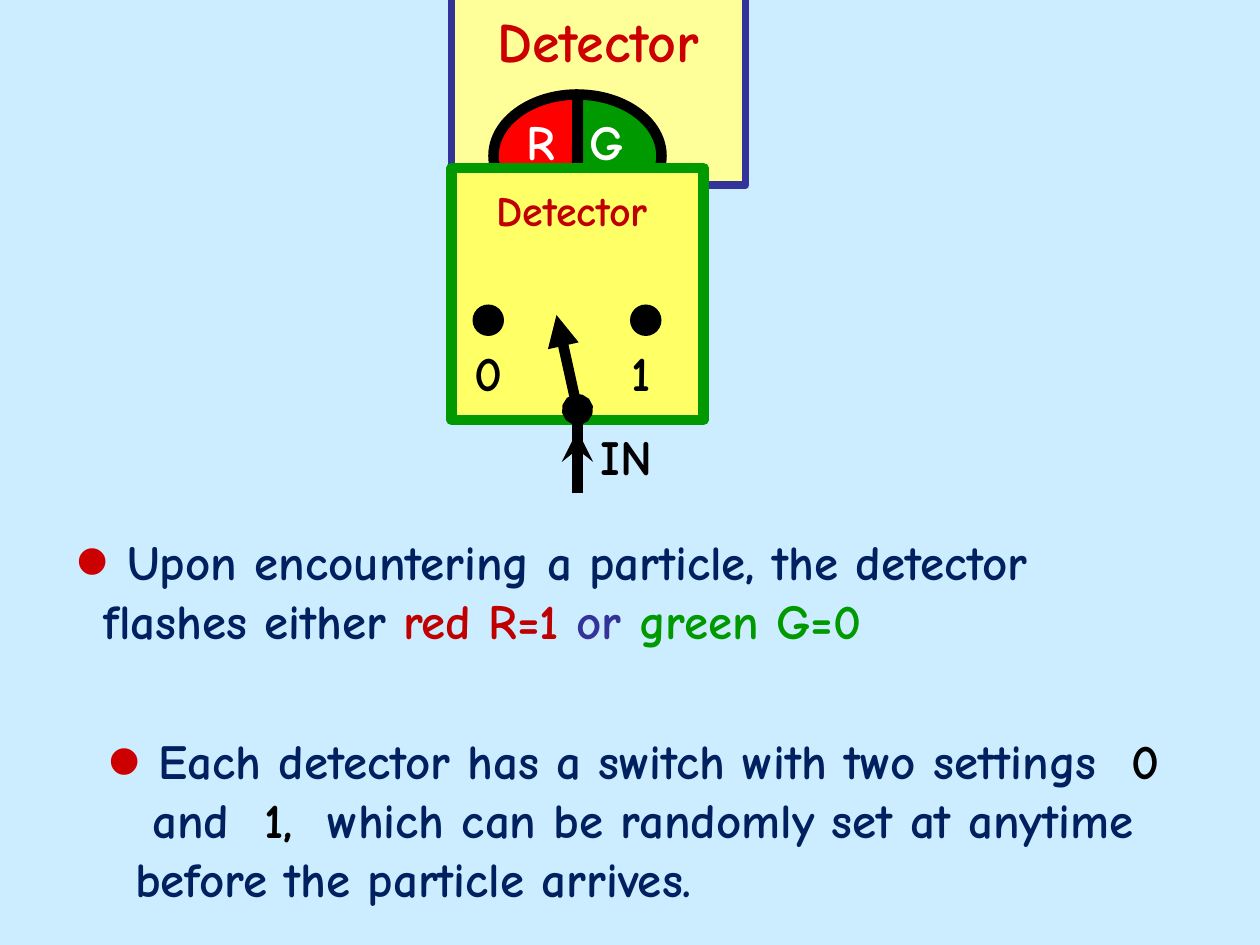
from lxml import etree
from pptx import Presentation
from pptx.dml.color import RGBColor
from pptx.enum.shapes import MSO_CONNECTOR, MSO_SHAPE
from pptx.enum.text import MSO_ANCHOR, MSO_AUTO_SIZE, PP_ALIGN
from pptx.oxml.ns import qn
from pptx.util import Pt

STRAIGHT = MSO_CONNECTOR.STRAIGHT
CHORD, RECTANGLE, OVAL = MSO_SHAPE.CHORD, MSO_SHAPE.RECTANGLE, MSO_SHAPE.OVAL
TOP, MIDDLE = MSO_ANCHOR.TOP, MSO_ANCHOR.MIDDLE
GROW = MSO_AUTO_SIZE.SHAPE_TO_FIT_TEXT
LEFT, CENTER = PP_ALIGN.LEFT, PP_ALIGN.CENTER

SKY = RGBColor(0xCC, 0xEC, 0xFF)
RED = RGBColor(0xFF, 0x00, 0x00)
GREEN = RGBColor(0x00, 0x99, 0x00)
YELLOW = RGBColor(0xFF, 0xFF, 0x66)
CREAM = RGBColor(0xFF, 0xFF, 0x99)
INDIGO = RGBColor(0x33, 0x33, 0x99)
NAVY = RGBColor(0x00, 0x20, 0x60)
CRIMSON = RGBColor(0xCC, 0x00, 0x00)
DARK_RED = RGBColor(0xC0, 0x00, 0x00)
BLACK = RGBColor(0x00, 0x00, 0x00)
WHITE = RGBColor(0xFF, 0xFF, 0xFF)

BOTTOM_SIDE = 2
CENTRE_X = 330


def write(frame, *runs, size=28, align=LEFT, anchor=TOP, bullet=None, hanging=16):
    """Fill a text frame with one paragraph of (text, colour) runs."""
    frame.word_wrap = True
    frame.auto_size = GROW
    frame.vertical_anchor = anchor
    paragraph = frame.paragraphs[0]
    paragraph.alignment = align
    paragraph.space_before = Pt(0)
    if bullet is not None:
        properties = paragraph._p.get_or_add_pPr()
        properties.set("marL", str(Pt(hanging)))
        properties.set("indent", str(Pt(-hanging)))
        colour = etree.SubElement(properties, qn("a:buClr"))
        etree.SubElement(colour, qn("a:srgbClr"), val=str(bullet))
        etree.SubElement(properties, qn("a:buSzPct"), val="200000")
        etree.SubElement(properties, qn("a:buFont"), typeface="Arial")
        etree.SubElement(properties, qn("a:buChar"), char="•")
    for text, color in runs:
        run = paragraph.add_run()
        run.text = text
        run.font.name = "Comic Neue"
        run.font.size = Pt(size)
        run.font.bold = True
        run.font.color.rgb = color


class DetectorSlide:
    """Hold the slide, its drawing group and the shared line style."""

    def __init__(self, slide, stroke=6):
        self.slide = slide
        self.stroke = stroke
        self.drawing = slide.shapes.add_group_shape().shapes
        slide.background.fill.solid()
        slide.background.fill.fore_color.rgb = SKY

    def place(self, holder, left, top, width, height):
        holder.left, holder.top = Pt(left), Pt(top)
        holder.width, holder.height = Pt(width), Pt(height)

    def title(self, text, *box):
        title = self.slide.shapes.title
        self.place(title, *box)
        title.fill.solid()
        title.fill.fore_color.rgb = CREAM
        title.line.color.rgb = INDIGO
        title.line.width = Pt(4.5)
        write(title.text_frame, (text, CRIMSON), size=32, align=CENTER, anchor=MIDDLE)

    def bullet(self, index, box, *runs):
        body = self.slide.placeholders[index]
        self.place(body, *box)
        write(body.text_frame, *runs, bullet=CRIMSON)

    def shape(self, kind, left, top, width, height, fill, line=None):
        shape = self.drawing.add_shape(kind, Pt(left), Pt(top), Pt(width), Pt(height))
        shape.shadow.inherit = False
        shape.fill.solid()
        shape.fill.fore_color.rgb = fill
        if line is None:
            shape.line.fill.background()
        else:
            shape.line.color.rgb = line
            shape.line.width = Pt(self.stroke)
        return shape

    def lamp(self, fill, rotation):
        lamp = self.shape(CHORD, 282, 54, 96, 70, fill, BLACK)
        lamp.adjustments[0] = 54.28
        lamp.adjustments[1] = 162
        lamp.rotation = rotation

    def label(self, text, left, top, width, height, color=BLACK, **style):
        label = self.drawing.add_textbox(Pt(left), Pt(top), Pt(width), Pt(height))
        write(label.text_frame, (text, color), **style)

    def line(self, start, end, head=None, tail=None):
        line = self.drawing.add_connector(STRAIGHT, *map(Pt, (*start, *end)))
        line.line.color.rgb = BLACK
        line.line.width = Pt(self.stroke)
        etree.SubElement(line._element.spPr, qn("a:effectLst"))
        outline = line.line._get_or_add_ln()
        for tag, kind in (("a:headEnd", head), ("a:tailEnd", tail)):
            if kind:
                etree.SubElement(outline, qn(tag), type=kind)
        return line


def main():
    deck = Presentation()
    deck.slide_width, deck.slide_height = Pt(720), Pt(540)
    page = DetectorSlide(deck.slides.add_slide(deck.slide_layouts[3]))

    page.title("Detector", 258, 0, 168, 46)
    page.lamp(RED, 0)
    page.lamp(GREEN, 180)
    casing = page.shape(RECTANGLE, 258, 96, 144, 144, YELLOW, GREEN)
    page.line((CENTRE_X, 234), (318, 180), head="oval", tail="triangle")
    page.label("R", 294, 60, 35, 39, WHITE)
    page.label("G", CENTRE_X, 60, 36, 41, WHITE)
    for setting, left in (("0", 264), ("1", 354)):
        page.label(setting, left, 192, 30, 42)
        page.shape(OVAL, left + 6, 174, 18, 18, BLACK)
    page.label("Detector", 240, 102, 174, 37, DARK_RED, size=24, align=CENTER)
    inlet = page.line((CENTRE_X, 282), (CENTRE_X, 240))
    inlet.end_connect(casing, BOTTOM_SIDE)
    page.label("IN", 336, 240, 66, 41)
    page.line((CENTRE_X, 276), (CENTRE_X, 246), tail="stealth")

    page.bullet(
        1, (36, 300, 642, 75),
        (" ", INDIGO),
        ("Upon encountering a particle, the detector flashes either ", NAVY),
        ("red R=1", DARK_RED),
        (" or ", INDIGO),
        ("green G=0", GREEN),
    )
    page.bullet(
        2, (54, 414, 618, 109),
        (" ", INDIGO),
        ("Each detector has a switch with two settings  ", NAVY),
        ("0  ", BLACK),
        ("and  ", NAVY),
        ("1,  ", BLACK),
        ("which can be randomly set at anytime before the particle arrives.", NAVY),
    )
    deck.save("out.pptx")


if __name__ == "__main__":
    main()
